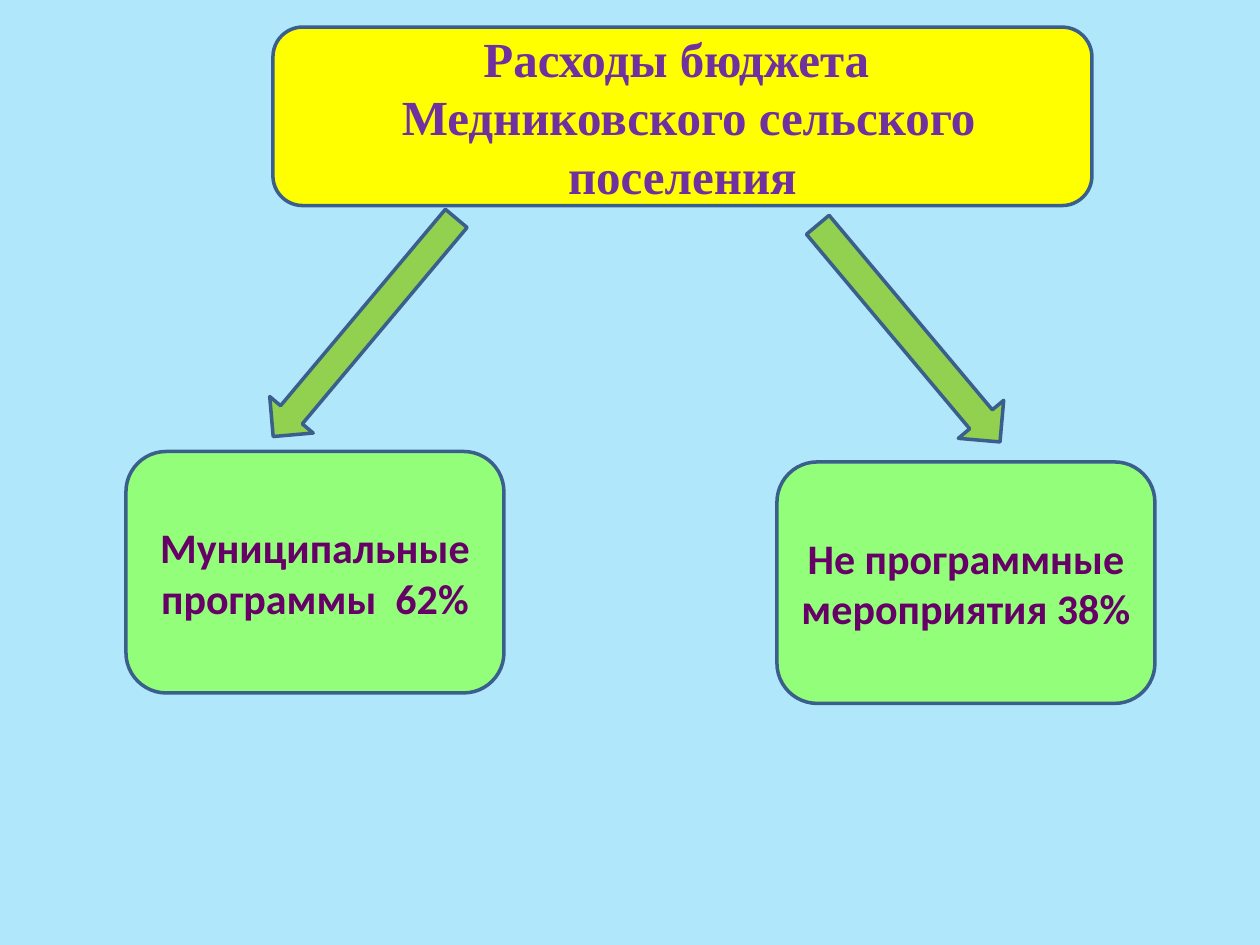
from pptx import Presentation
from pptx import util as u
from pptx.dml import color
from pptx.enum import shapes, text


def rgb(value):
    return color.RGBColor.from_string(value)


def add_shape(s, kind, box, fill):
    sp = s.shapes.add_shape(kind, *(u.Pt(v) for v in box))
    sp.shadow.inherit = False
    sp.fill.solid()
    sp.fill.fore_color.rgb = rgb(fill)
    sp.line.color.rgb = rgb("3A5F8C")
    sp.line.width = u.Pt(2)
    return sp


def add_arrow(s, box, angle):
    sp = add_shape(s, shapes.MSO_SHAPE.DOWN_ARROW, box, "92D050")
    sp.rotation = angle


def add_box(s, box, fill, words, font, size, font_color):
    sp = add_shape(s, shapes.MSO_SHAPE.ROUNDED_RECTANGLE, box, fill)
    tf = sp.text_frame
    tf.word_wrap = True
    tf.vertical_anchor = text.MSO_ANCHOR.MIDDLE
    tf.text = words
    for p in tf.paragraphs:
        p.alignment = text.PP_ALIGN.CENTER
        for r in p.runs:
            r.font.name = font
            r.font.size = u.Pt(size)
            r.font.bold = True
            r.font.color.rgb = rgb(font_color)


def main():
    prs = Presentation()
    prs.slide_width, prs.slide_height = u.Pt(720), u.Pt(540)
    s = prs.slides.add_slide(prs.slide_layouts[6])
    s.background.fill.solid()
    s.background.fill.fore_color.rgb = rgb("B0E7FA")

    add_arrow(s, (502.5, 109.5, 33.8, 162), 320)
    add_arrow(s, (192.2, 105.8, 32.4, 162.7), 40)

    for left, top, words in (
        (72, 258, "Муниципальные программы  62%"),
        (444, 264, "Не программные мероприятия 38%"),
    ):
        add_box(s, (left, top, 216, 138), "93FE7A", words, "Calibri", 24, "660066")

    add_box(s, (156, 15.5, 468, 102), "FFFF00",
            "Расходы бюджета \n Медниковского сельского поселения",
            "Times New Roman", 28, "7030A0")
    prs.save("out.pptx")


if __name__ == "__main__":
    main()
